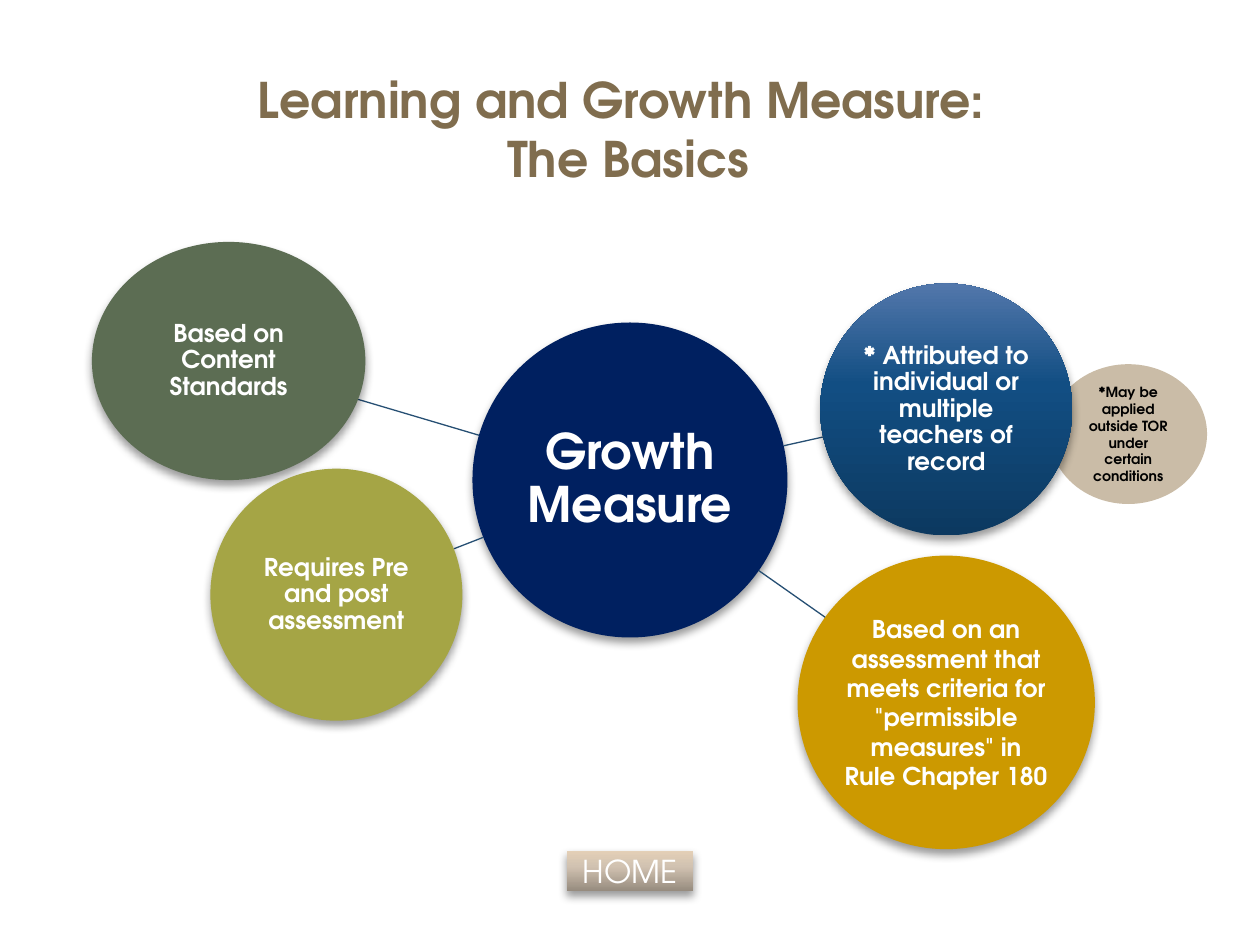
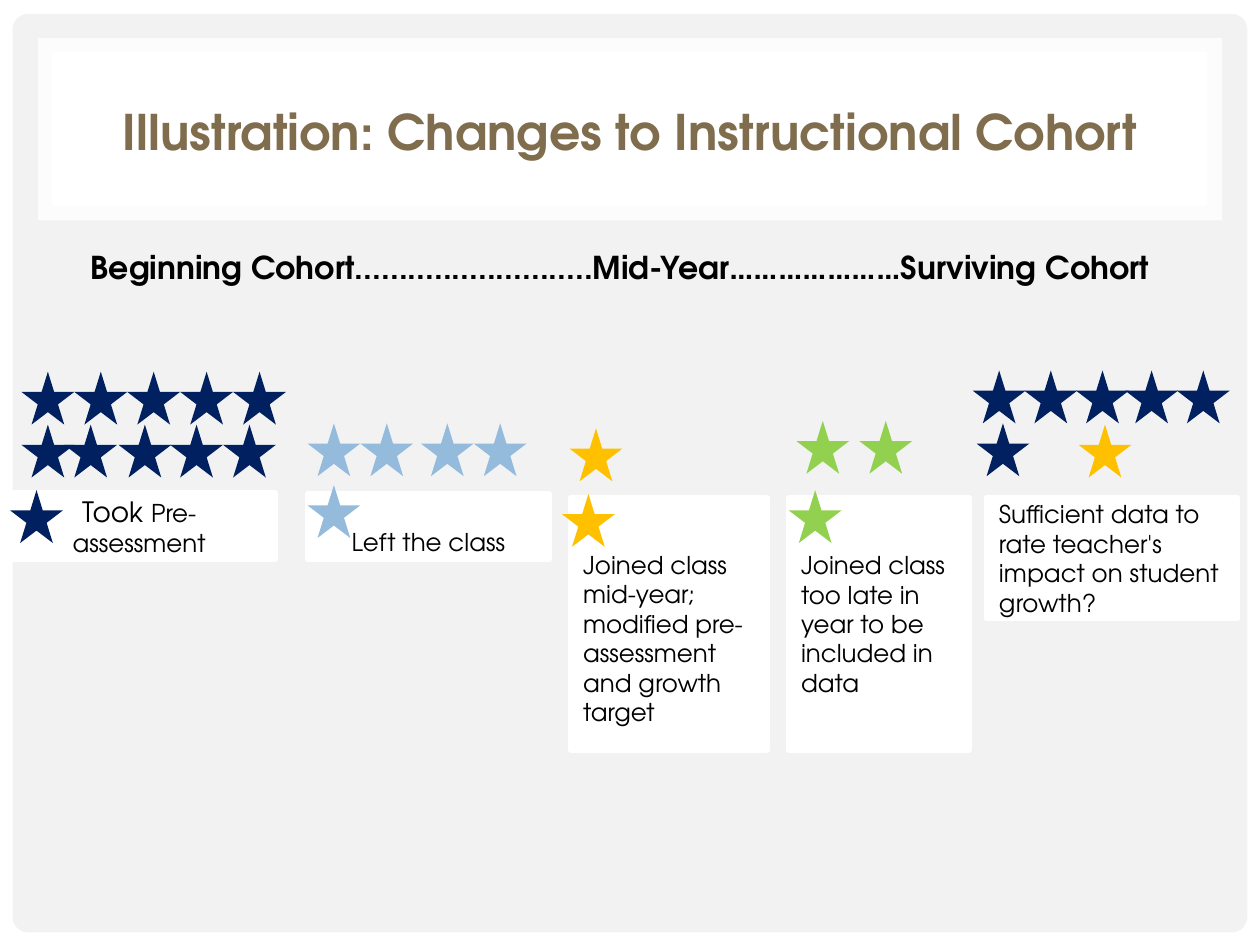
from dataclasses import dataclass
from math import hypot

from lxml import etree
from pptx import Presentation
from pptx.dml.color import RGBColor
from pptx.enum.shapes import MSO_CONNECTOR, MSO_SHAPE
from pptx.enum.text import MSO_ANCHOR, MSO_AUTO_SIZE, PP_ALIGN
from pptx.oxml import parse_xml
from pptx.oxml.ns import nsdecls, qn
from pptx.util import Inches, Pt

OVAL, STAR, RECT = MSO_SHAPE.OVAL, MSO_SHAPE.STAR_5_POINT, MSO_SHAPE.RECTANGLE
ROUNDED, BUTTON = MSO_SHAPE.ROUNDED_RECTANGLE, MSO_SHAPE.ACTION_BUTTON_CUSTOM
STRAIGHT = MSO_CONNECTOR.STRAIGHT
MIDDLE, TOP = MSO_ANCHOR.MIDDLE, MSO_ANCHOR.TOP
CENTER, LEFT = PP_ALIGN.CENTER, PP_ALIGN.LEFT
NO_FIT = MSO_AUTO_SIZE.NONE
TITLE_ONLY, BLANK_MARGINS = 5, (0.1, 0.05, 0.1, 0.05)


@dataclass(frozen=True)
class Theme:
    font: str = "TeX Gyre Adventor"
    white: str = "FFFFFF"
    black: str = "000000"
    gray: str = "F2F2F2"
    brown: str = "806D4E"
    tan: str = "CABCA7"
    navy: str = "002060"
    forest: str = "5C6D53"
    olive: str = "A5A545"
    gold: str = "CC9900"
    spoke: str = "264F73"
    sky: str = "94BADC"
    amber: str = "FFC000"
    green: str = "92D050"
    # Gradients run from the bottom edge to the top edge.
    blue_fade: tuple = ((0, "0C3960"), (60, "124E83"), (100, "5277AB"))
    tan_fade: tuple = ((0, "978C7F"), (60, "D1C2B1"), (100, "E4D0B7"))
    title_size: int = 28
    heading_size: int = 18
    lead_size: int = 16
    body_size: int = 14
    note_size: int = 8


THEME = Theme()
SLIDE_WIDTH, SLIDE_HEIGHT = 10, 7.5

# Content: areas are (left, top, width, height) in inches.
BASICS_TITLE = ["Learning and Growth Measure: ", "The Basics"]
BASICS_TITLE_AREA = (0.47, 0.45, 9.03, 1.14)
HUB = ("Growth Measure", (3.75, 2.56, 2.5, 2.5))
SATELLITES = [  # text, area, fill, line spacing
    ("Based on Content Standards", (0.73, 1.92, 2.17, 1.89), THEME.forest, 0.9),
    ("Requires Pre and post assessment", (1.67, 3.72, 2, 2), THEME.olive, 0.9),
    ('Based on an assessment that meets criteria for "permissible measures" in Rule Chapter 180',
     (6.33, 4.41, 2.36, 2.33), THEME.gold, 1),
    ("* Attributed to individual or multiple teachers of record",
     (6.51, 2.25, 2, 2), THEME.blue_fade, 0.9),
]
SIDE_NOTE = ("*May be applied outside TOR under certain conditions", (8.33, 2.89, 1.25, 1.11))
HOME = ("HOME", (4.5, 6.75, 1, 0.32))

COHORT_TITLE = ["Illustration: Changes to Instructional Cohort"]
COHORT_TITLE_AREA = (0, 0.58, 10, 0.92)
TIMELINE = ("Beginning Cohort...........................Mid-Year…………………Surviving Cohort",
            (0.5, 1.92, 9, 0.5))
LEGEND = [  # runs, area, alignment, top margin
    ([("Took ", THEME.lead_size), ("Pre-assessment", THEME.body_size)],
     (0.03, 3.91, 2.15, 0.53), CENTER, 0.05),
    ([("Left the class", THEME.body_size)], (2.44, 3.92, 1.92, 0.52), CENTER, 0.28),
    ([("Joined class mid-year; modified pre-assessment and growth target", THEME.body_size)],
     (4.53, 3.95, 1.56, 2), LEFT, 0.28),
    ([("Joined class too late in year to be included in data", THEME.body_size)],
     (6.26, 3.95, 1.43, 2), LEFT, 0.05),
    ([("Sufficient data to rate teacher's impact on student growth?", THEME.body_size)],
     (7.83, 3.95, 1.99, 0.96), LEFT, 0.05),
]
STAR_SIZE = 0.42
STAR_ROWS = [  # colour, top, left edges
    (THEME.navy, 2.95, [0.17 + i * STAR_SIZE for i in range(5)]),
    (THEME.navy, 3.37, [0.17, 0.51, 0.94, 1.35, 1.77]),
    (THEME.sky, 3.36, [2.44, 2.86, 3.34, 3.76]),
    (THEME.amber, 3.4, [4.52]),
    (THEME.green, 3.34, [6.32, 6.82]),
    (THEME.navy, 2.94, [7.72, 8.13, 8.54, 8.93, 9.34]),
    (THEME.navy, 3.36, [7.75]),
    (THEME.amber, 3.37, [8.56]),
    (THEME.navy, 3.89, [0.08]),
    (THEME.sky, 3.85, [2.44]),
    (THEME.amber, 3.92, [4.46]),
    (THEME.green, 3.89, [6.26]),
]


def inches(values):
    return [Inches(value) for value in values]


def paint(shape, fill, alpha=None):
    """Fill with one colour, or with a tuple of (position, colour) stops."""
    if isinstance(fill, str):
        shape.fill.solid()
        shape.fill.fore_color.rgb = RGBColor.from_string(fill)
        if alpha:
            color = shape.element.spPr.find(".//" + qn("a:srgbClr"))
            etree.SubElement(color, qn("a:alpha")).set("val", str(alpha * 1000))
        return
    stops = "".join(f'<a:gs pos="{position * 1000}"><a:srgbClr val="{color}"/></a:gs>'
                    for position, color in fill)
    shape.element.spPr.find(qn("a:prstGeom")).addnext(parse_xml(
        f'<a:gradFill {nsdecls("a")} rotWithShape="1"><a:gsLst>{stops}</a:gsLst>'
        '<a:lin ang="16200000" scaled="0"/></a:gradFill>'))


def add_figure(page, kind, area, fill, alpha=None, shadow=False):
    shape = page.shapes.add_shape(kind, *inches(area))
    shape.shadow.inherit = False
    paint(shape, fill, alpha)
    shape.line.fill.background()
    if shadow:
        shape.element.spPr.find(qn("a:effectLst")).append(parse_xml(
            f'<a:outerShdw {nsdecls("a")} blurRad="{Pt(5.2)}" dist="{Pt(3)}" dir="5400000" '
            'rotWithShape="0"><a:srgbClr val="000000"><a:alpha val="40000"/></a:srgbClr>'
            '</a:outerShdw>'))
    return shape


def add_span(para, text, size, color, bold=False):
    span = para.add_run()
    span.text = text
    span.font.name = THEME.font
    span.font.size = Pt(size)
    span.font.bold = bold
    span.font.color.rgb = RGBColor.from_string(color)


def start_text(shape, align=CENTER, anchor=MIDDLE, margins=BLANK_MARGINS):
    frame = shape.text_frame
    frame.word_wrap = True
    frame.auto_size = NO_FIT
    frame.vertical_anchor = anchor
    (frame.margin_left, frame.margin_top,
     frame.margin_right, frame.margin_bottom) = inches(margins)
    para = frame.paragraphs[0]
    para.alignment = align
    return para


def add_page(deck, title_lines, title_area, panel_color):
    page = deck.slides.add_slide(deck.slide_layouts[TITLE_ONLY])
    panel = add_figure(page, ROUNDED, (0.1, 0.11, 9.8, 7.29), panel_color)
    panel.adjustments[0] = 0.017
    add_figure(page, RECT, (0.3, 0.3, 9.4, 1.45), THEME.white, alpha=83)
    add_figure(page, RECT, (0.41, 0.41, 9.17, 1.22), THEME.white)

    title = page.shapes.title
    title.element.getparent().append(title.element)  # bring in front of the band
    title.left, title.top, title.width, title.height = inches(title_area)
    para = start_text(title)
    for index, line in enumerate(title_lines):
        if index:
            para.add_line_break()
        add_span(para, line, THEME.title_size, THEME.brown, bold=True)
    return page


def add_bubble(page, text, area, fill, size, spacing=0.9):
    bubble = add_figure(page, OVAL, area, fill, shadow=True)
    para = start_text(bubble, margins=(0.01,) * 4)
    para.line_spacing = spacing
    add_span(para, text, size, THEME.white, bold=True)


def center_of(area):
    left, top, width, height = area
    return left + width / 2, top + height / 2


def rim_point(area, target):
    """Where the line from an ellipse's centre to the target leaves the ellipse."""
    x, y = center_of(area)
    dx, dy = target[0] - x, target[1] - y
    reach = hypot(dx / (area[2] / 2), dy / (area[3] / 2))
    return x + dx / reach, y + dy / reach


def add_spoke(page, hub_area, area):
    start = rim_point(hub_area, center_of(area))
    end = rim_point(area, center_of(hub_area))
    spoke = page.shapes.add_connector(STRAIGHT, *inches(start + end))
    spoke.line.color.rgb = RGBColor.from_string(THEME.spoke)
    spoke.line.width = Pt(0.75)
    etree.SubElement(spoke.element.spPr, qn("a:effectLst"))


def build_basics(deck):
    page = add_page(deck, BASICS_TITLE, BASICS_TITLE_AREA, THEME.white)
    note_text, note_area = SIDE_NOTE
    note = add_figure(page, OVAL, note_area, THEME.tan)
    add_span(start_text(note), note_text, THEME.note_size, THEME.black, bold=True)

    hub_text, hub_area = HUB
    add_bubble(page, hub_text, hub_area, THEME.navy, THEME.title_size)
    for text, area, fill, spacing in SATELLITES:
        add_spoke(page, hub_area, area)
        add_bubble(page, text, area, fill, THEME.body_size, spacing)

    home_text, home_area = HOME
    button = add_figure(page, BUTTON, home_area, THEME.tan_fade, shadow=True)
    add_span(start_text(button), home_text, THEME.heading_size, THEME.white)


def build_cohort(deck):
    page = add_page(deck, COHORT_TITLE, COHORT_TITLE_AREA, THEME.gray)
    timeline_text, timeline_area = TIMELINE
    timeline = page.shapes.add_textbox(*inches(timeline_area))
    para = start_text(timeline, LEFT, TOP, (0.22, 0.05, 0.1, 0.05))
    add_span(para, timeline_text, THEME.heading_size, THEME.black, bold=True)

    for runs, area, align, top_margin in LEGEND:
        box = add_figure(page, RECT, area, THEME.white)
        box.line.color.rgb = RGBColor.from_string(THEME.white)
        box.line.width = Pt(3.35)
        para = start_text(box, align, margins=(0.1, top_margin, 0.1, 0.05))
        for text, size in runs:
            add_span(para, text, size, THEME.black)

    for color, top, lefts in STAR_ROWS:
        for left in lefts:
            add_figure(page, STAR, (left, top, STAR_SIZE, STAR_SIZE), color)


def main():
    deck = Presentation()
    deck.slide_width, deck.slide_height = inches((SLIDE_WIDTH, SLIDE_HEIGHT))
    build_basics(deck)
    build_cohort(deck)
    deck.save("out.pptx")


if __name__ == "__main__":
    main()
